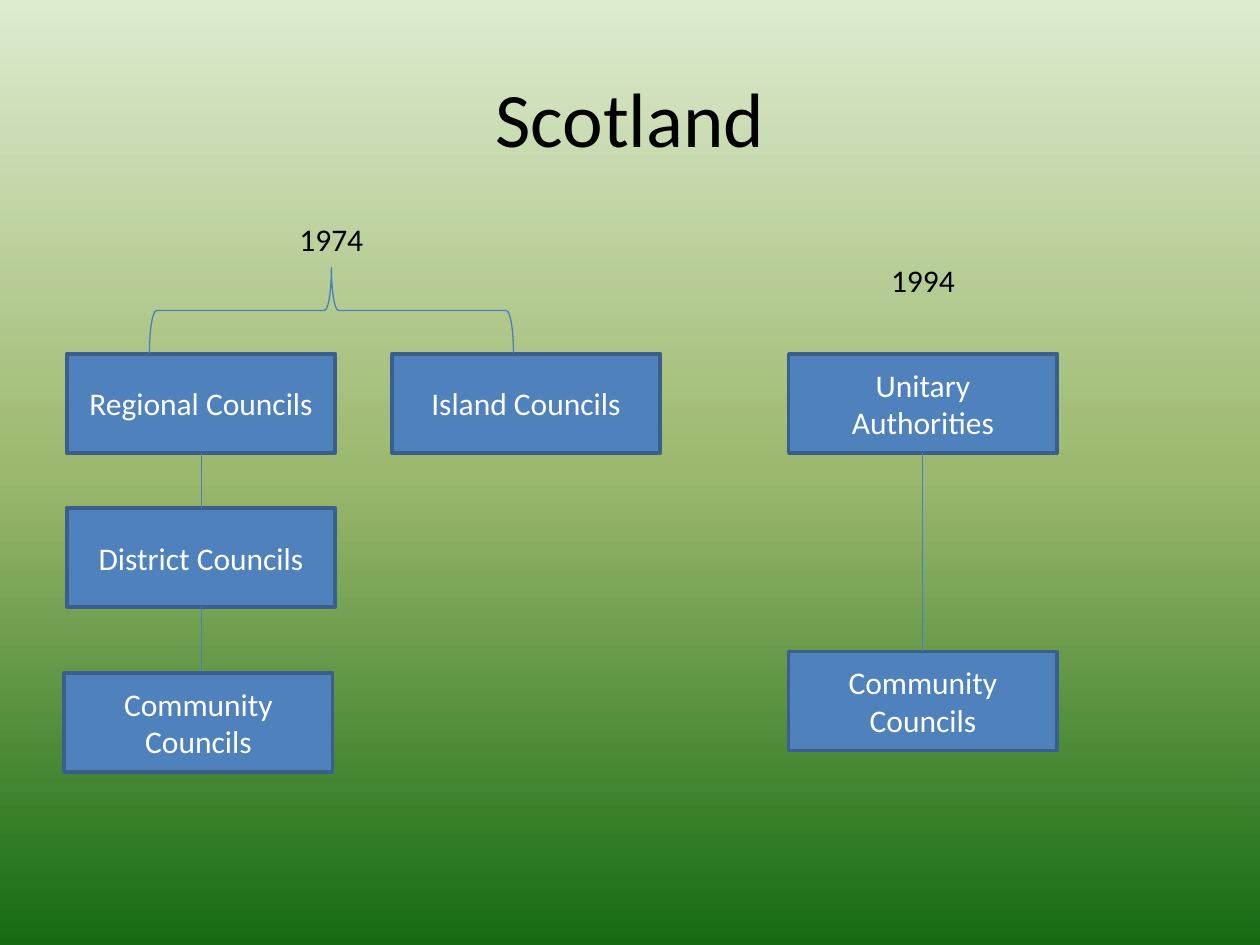
from copy import deepcopy

from lxml.etree import SubElement
from pptx import Presentation
from pptx.dml.color import RGBColor
from pptx.enum.shapes import MSO_CONNECTOR, MSO_SHAPE
from pptx.enum.text import MSO_ANCHOR, PP_ALIGN
from pptx.oxml.ns import qn
from pptx.util import Pt

BLACK = RGBColor(0x00, 0x00, 0x00)
WHITE = RGBColor(0xFF, 0xFF, 0xFF)
BLUE = RGBColor(0x4F, 0x81, 0xBD)
BORDER = RGBColor(0x3A, 0x5F, 0x8C)
LINK = RGBColor(0x4B, 0x7E, 0xBC)
BACKGROUND = [
    (0, RGBColor(0xDD, 0xEB, 0xCF)),
    (0.5, RGBColor(0x9C, 0xB8, 0x6E)),
    (1, RGBColor(0x15, 0x6B, 0x13)),
]

TITLE = "Scotland"
BOX_WIDTH, BOX_HEIGHT = 153.4, 56.7
COUNCILS = [
    ("Regional Councils", 38.2, 202.2),
    ("District Councils", 38.2, 290.2),
    ("Island Councils", 223.9, 202.2),
    ("Unitary Authorities", 450.7, 202.2),
    ("Community Councils", 36.7, 384.5),
    ("Community Councils", 450.7, 372.2),
]
YEARS = [("1974", 64.8, 122.4, 249.1), ("1994", 465.1, 145.4, 124.6)]
LINKS = [(115.2, 258.9, 290.2), (115.2, 346.9, 383.2), (527.2, 258.9, 372.2)]
BRACE = (164.9, 73.4, 49, 208.1)


def write(shape, text, size=18, color=BLACK, anchor=MSO_ANCHOR.TOP):
    """Put centred text into a shape."""
    frame = shape.text_frame
    frame.word_wrap = True
    frame.vertical_anchor = anchor
    para = frame.paragraphs[0]
    para.alignment = PP_ALIGN.CENTER
    span = para.add_run()
    span.text = text
    span.font.name = "Calibri"
    span.font.size = Pt(size)
    span.font.color.rgb = color


def paint_background(page):
    """Fill the page with a vertical three-stop gradient."""
    fill = page.background.fill
    fill.gradient()
    fill.gradient_angle = 270
    first = page.element.find(".//" + qn("a:gs"))
    first.addnext(deepcopy(first))
    for stop, (position, color) in zip(fill.gradient_stops, BACKGROUND):
        stop.position = position
        stop.color.rgb = color


def set_line(shape, color, width):
    """Give a shape its outline."""
    shape.line.color.rgb = color
    shape.line.width = Pt(width)


def main():
    """Build the slide and save it."""
    deck = Presentation()
    deck.slide_width, deck.slide_height = Pt(720), Pt(540)
    page = deck.slides.add_slide(deck.slide_layouts[5])
    paint_background(page)

    title = page.shapes.title
    title.left, title.top, title.width, title.height = map(Pt, (36, 21.6, 648, 90))
    write(title, TITLE, size=44, anchor=MSO_ANCHOR.MIDDLE)

    for name, left, top in COUNCILS:
        box = page.shapes.add_shape(
            MSO_SHAPE.RECTANGLE, *map(Pt, (left, top, BOX_WIDTH, BOX_HEIGHT)))
        box.shadow.inherit = False
        box.fill.solid()
        box.fill.fore_color.rgb = BLUE
        set_line(box, BORDER, 2)
        write(box, name, color=WHITE, anchor=MSO_ANCHOR.MIDDLE)

    brace = page.shapes.add_shape(MSO_SHAPE.RIGHT_BRACE, *map(Pt, BRACE))
    brace.rotation = 270
    brace.shadow.inherit = False
    brace.fill.background()
    set_line(brace, LINK, 0.75)

    for year, left, top, width in YEARS:
        write(page.shapes.add_textbox(*map(Pt, (left, top, width, 29))), year)

    for x, top, bottom in LINKS:
        link = page.shapes.add_connector(
            MSO_CONNECTOR.STRAIGHT, *map(Pt, (x, top, x, bottom)))
        set_line(link, LINK, 0.75)
        SubElement(link.element.spPr, qn("a:effectLst"))

    deck.save("out.pptx")


if __name__ == "__main__":
    main()
